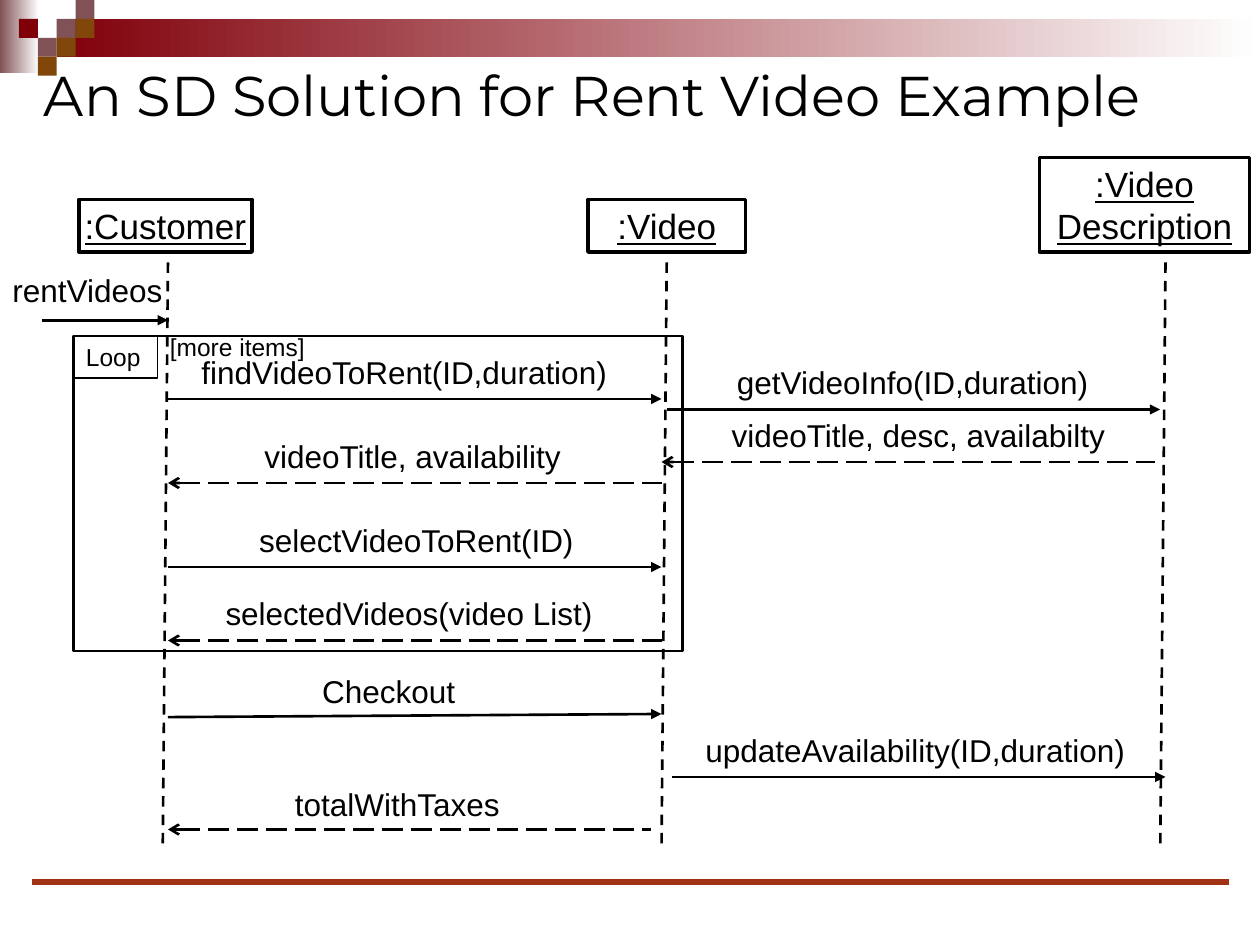
from lxml.etree import SubElement
from pptx import Presentation
from pptx.dml.color import RGBColor
from pptx.enum.dml import MSO_LINE
from pptx.enum.shapes import MSO_CONNECTOR, MSO_SHAPE
from pptx.enum.text import MSO_ANCHOR, PP_ALIGN
from pptx.oxml.ns import qn
from pptx.util import Inches, Pt

BLACK = RGBColor(0x00, 0x00, 0x00)
WHITE = RGBColor(0xFF, 0xFF, 0xFF)
MAROON = RGBColor(0x80, 0x00, 0x0A)
MAUVE = RGBColor(0x80, 0x52, 0x55)
BROWN = RGBColor(0x81, 0x46, 0x0A)
RUST = RGBColor(0xA1, 0x32, 0x14)

COLUMNS, ROWS = 120, 90
TILE = 1.8
CUSTOMER, VIDEO, DESCRIPTION = 16, 63, 111
LIFELINE_TOP, LIFELINE_END = 25, 81


class SequenceDiagram:
    font = "Arial"
    title_font = "Montserrat"

    def __init__(self, prs):
        self.s = prs.slides.add_slide(prs.slide_layouts[6])
        self.col = prs.slide_width / COLUMNS
        self.row = prs.slide_height / ROWS

    def place(self, x, y, w, h):
        return [round(v) for v in (x * self.col, y * self.row, w * self.col, h * self.row)]

    def box(self, x, y, w, h, fill=None, line=None, width=1.5, kind=MSO_SHAPE.RECTANGLE):
        sp = self.s.shapes.add_shape(kind, *self.place(x, y, w, h))
        sp.shadow.inherit = False
        if fill is None:
            sp.fill.background()
        else:
            sp.fill.solid()
            sp.fill.fore_color.rgb = fill
        if line is None:
            sp.line.fill.background()
        else:
            sp.line.color.rgb = line
            sp.line.width = Pt(width)
        return sp

    def fade(self, x, y, w, h, color):
        fill = self.box(x, y, w, h).fill
        fill.gradient()
        fill.gradient_angle = 0
        for stop, rgb, position in zip(fill.gradient_stops, (color, WHITE), (0, 1)):
            stop.color.rgb = rgb
            stop.position = position

    def set_text(self, sp, text, size, font=None, align=PP_ALIGN.LEFT,
                 anchor=MSO_ANCHOR.TOP, wrap=False, underline=False):
        tf = sp.text_frame
        tf.word_wrap = wrap
        tf.vertical_anchor = anchor
        tf.text = text
        for p in tf.paragraphs:
            p.alignment = align
            p.font.name = font or self.font
            p.font.size = Pt(size)
            p.font.color.rgb = BLACK
            p.font.underline = underline

    def title(self, text, x, y, w, h):
        tb = self.s.shapes.add_textbox(*self.place(x, y, w, h))
        self.set_text(tb, text, 32, self.title_font, anchor=MSO_ANCHOR.MIDDLE, wrap=True)

    def label(self, text, x, y, w, size=18):
        tb = self.s.shapes.add_textbox(*self.place(x, y, w, 4.8))
        self.set_text(tb, text, size)

    def line(self, x1, y1, x2, y2, color=BLACK, width=1.5, dash=None, head=None, tail=None):
        c = self.s.shapes.add_connector(MSO_CONNECTOR.STRAIGHT, *self.place(x1, y1, x2, y2))
        c.line.color.rgb = color
        c.line.width = Pt(width)
        if dash:
            c.line.dash_style = dash
        ln = c.line.fill._xPr
        for tag, arrow in (("a:headEnd", head), ("a:tailEnd", tail)):
            if arrow:
                SubElement(ln, qn(tag), type=arrow)
        SubElement(c._element.spPr, qn("a:effectLst"))

    def participant(self, text, x, y, w, h, lifeline):
        sp = self.box(x, y, w, h, line=BLACK, width=2, kind=MSO_SHAPE.FLOWCHART_PROCESS)
        self.set_text(sp, text, 20, align=PP_ALIGN.CENTER,
                      anchor=MSO_ANCHOR.MIDDLE, underline=True)
        self.line(lifeline, LIFELINE_TOP, lifeline - 0.5, LIFELINE_END, dash=MSO_LINE.DASH)

    def call(self, text, x1, x2, y, label, end_y=None):
        self.line(x1, y, x2, end_y or y, tail="triangle")
        self.label(text, *label)

    def reply(self, text, x1, x2, y, label):
        self.line(x1, y, x2, y, dash=MSO_LINE.LONG_DASH, head="arrow")
        self.label(text, *label)

    def loop(self, x, y, w, h, guard):
        self.box(x, y, w, h, line=BLACK)
        tab = self.box(x, y, 8, 4, line=BLACK, width=0.75)
        self.set_text(tab, "Loop", 14, wrap=True)
        self.label(guard, x + 8, y - 1, 15.4, 14)


def main():
    prs = Presentation()
    prs.slide_width, prs.slide_height = Inches(10), Inches(7.5)
    d = SequenceDiagram(prs)

    d.fade(0, 0, 3.72, 7, MAUVE)
    d.fade(3 * TILE, TILE, COLUMNS - 3 * TILE, 2 * TILE, MAROON)
    for i, j, color in ((3, 1, MAUVE), (4, 0, MAUVE), (4, 1, BROWN), (2, 2, MAUVE),
                        (1, 1, MAROON), (3, 2, BROWN), (2, 3, BROWN)):
        d.box(i * TILE, j * TILE, TILE, TILE, color)
    d.line(3, 84, 117, 84, RUST, 3)
    d.title("An SD Solution for Rent Video Example", 3, 5, 117, 8)

    d.participant(":Customer", 7.5, 19, 16.5, 5, CUSTOMER)
    d.participant(":Video", 56, 19, 15, 5, VIDEO + 0.5)
    d.participant(":Video\nDescription", 99, 15, 20, 9, DESCRIPTION)
    d.loop(7, 32, 58, 30, "[more items]")

    d.call("rentVideos", 4, CUSTOMER, 30.5, (0, 25.2, 16.8))
    d.call("findVideoToRent(ID,duration)", CUSTOMER, VIDEO, 38, (18, 33, 42.5))
    d.call("getVideoInfo(ID,duration)", VIDEO + 0.5, DESCRIPTION - 0.5, 39, (69, 34, 36.8))
    d.reply("videoTitle, desc, availabilty", VIDEO, DESCRIPTION - 1, 44, (68.5, 39, 38.5))
    d.reply("videoTitle, availability", CUSTOMER, VIDEO, 46, (24, 41, 31))
    d.call("selectVideoToRent(ID)", CUSTOMER, VIDEO, 54, (23.5, 49, 33.5))
    d.reply("selectedVideos(video List)", CUSTOMER, VIDEO, 61, (20.3, 56, 37.7))
    d.call("Checkout", CUSTOMER, VIDEO, 68.3, (29.5, 63.4, 15.2), 68)
    d.call("updateAvailability(ID,duration)", VIDEO + 1, DESCRIPTION, 74, (66, 69, 42.8))
    d.reply("totalWithTaxes", CUSTOMER, VIDEO - 1, 79, (26.9, 74.2, 22))

    prs.save("out.pptx")


if __name__ == "__main__":
    main()
